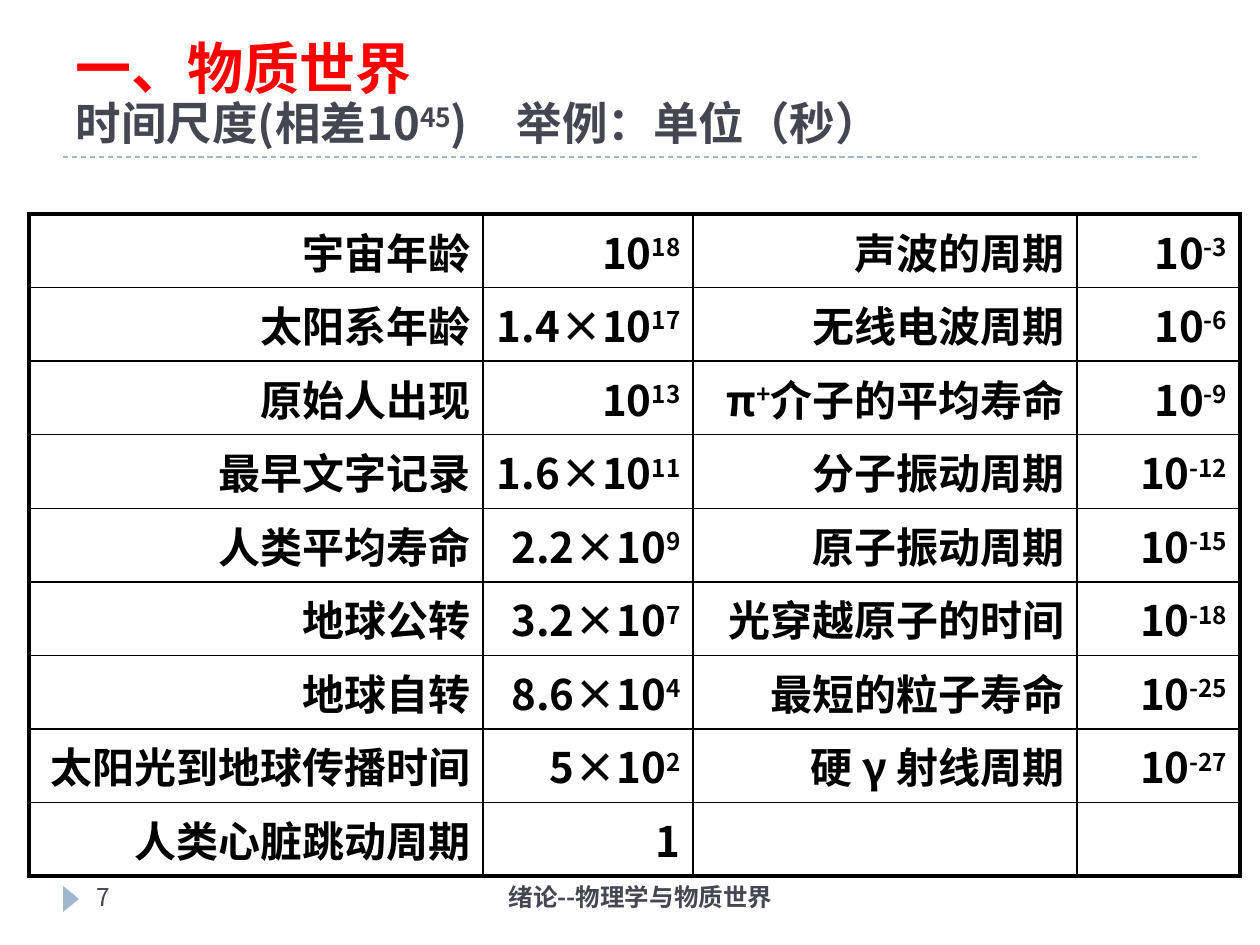
from dataclasses import dataclass

from lxml.etree import SubElement
from pptx import Presentation
from pptx.dml.color import RGBColor
from pptx.enum.dml import MSO_LINE_DASH_STYLE as Dash
from pptx.enum.shapes import MSO_CONNECTOR as Connector, MSO_SHAPE as Shape
from pptx.enum.text import MSO_ANCHOR as Anchor, MSO_AUTO_SIZE as AutoSize, PP_ALIGN as Align
from pptx.oxml import parse_xml
from pptx.oxml.ns import nsdecls, qn
from pptx.util import Emu, Pt

PX = 914400 / 126


@dataclass(frozen=True)
class Theme:
    font: str = "Noto Sans CJK JP"
    red: str = "FF0000"
    slate: str = "464653"
    black: str = "000000"
    accent: str = "9FB8CD"
    heading: int = 32
    subheading: int = 26
    cell: int = 24
    footer: int = 14
    hairline: float = 0.75
    grid: float = 1
    frame: float = 2.25


THEME = Theme()


def px(length):
    return Emu(round(length * PX))


def write(paragraph, text, size, color, bold=False, align=Align.LEFT):
    paragraph.alignment = align
    for index, part in enumerate(text.split("^")):
        if not part:
            continue
        run = paragraph.add_run()
        run.text = part
        run.font.size, run.font.bold, run.font.name = Pt(size), bold, THEME.font
        run.font.color.rgb = RGBColor.from_string(color)
        properties = run.font._element
        properties.set("lang", "zh-CN")
        if index % 2:
            properties.set("baseline", "30000")
        SubElement(properties, qn("a:ea")).set("typeface", THEME.font)


class SlideBuilder:
    def __init__(self, slide, theme):
        self.slide, self.theme = slide, theme

    def rule(self, left, right, y):
        rule = self.slide.shapes.add_connector(
            Connector.STRAIGHT, px(left), px(y), px(right), px(y))
        rule.line.color.rgb = RGBColor.from_string(self.theme.accent)
        rule.line.width = Pt(self.theme.hairline)
        rule.line.dash_style = Dash.DASH
        SubElement(rule._element.spPr, qn("a:effectLst"))

    def marker(self, left, top, width, height):
        marker = self.slide.shapes.add_shape(
            Shape.ISOSCELES_TRIANGLE, px(left), px(top), px(width), px(height))
        marker.rotation = 90
        marker.shadow.inherit = False
        marker.fill.solid()
        marker.fill.fore_color.rgb = RGBColor.from_string(self.theme.accent)
        marker.line.fill.background()

    def title(self, left, top, width, height, heading, subheading):
        title = self.slide.shapes.title
        title.left, title.top, title.width, title.height = map(px, (left, top, width, height))
        frame = title.text_frame
        frame.auto_size, frame.vertical_anchor = AutoSize.NONE, Anchor.BOTTOM
        paragraph = frame.paragraphs[0]
        paragraph.line_spacing = 0.9
        write(paragraph, heading, size=self.theme.heading, color=self.theme.red, bold=True)
        paragraph.add_line_break()
        write(paragraph, subheading, size=self.theme.subheading, color=self.theme.slate, bold=True)

    def footer(self, left, top, width, height, text, **style):
        frame = self.slide.shapes.add_textbox(*map(px, (left, top, width, height))).text_frame
        frame.word_wrap = True
        write(frame.paragraphs[0], text, size=self.theme.footer, color=self.theme.slate, **style)

    def border(self, cell, outer_sides):
        properties = cell._tc.get_or_add_tcPr()
        for position, side in enumerate("LRTB"):
            width = Pt(self.theme.frame if side in outer_sides else self.theme.grid)
            properties.insert(position, parse_xml(
                f'<a:ln{side} {nsdecls("a")} w="{width}"><a:solidFill>'
                f'<a:srgbClr val="{self.theme.black}"/></a:solidFill></a:ln{side}>'))

    def table(self, left, top, widths, row_height, rows):
        table = self.slide.shapes.add_table(
            len(rows), len(widths), px(left), px(top),
            px(sum(widths)), px(row_height * len(rows))).table
        table.first_row = table.horz_banding = False
        for column, width in zip(table.columns, widths):
            column.width = px(width)
        last_row, last_column = len(rows) - 1, len(widths) - 1
        for r, values in enumerate(rows):
            table.rows[r].height = px(row_height)
            for c, value in enumerate(values):
                cell = table.cell(r, c)
                cell.fill.background()
                edges = {"L": c == 0, "R": c == last_column, "T": r == 0, "B": r == last_row}
                self.border(cell, [side for side, outer in edges.items() if outer])
                write(cell.text_frame.paragraphs[0], value, size=self.theme.cell,
                      color=self.theme.black, bold=True, align=Align.RIGHT)


TIME_SCALES = [
    ("宇宙年龄", "10^18", "声波的周期", "10^-3"),
    ("太阳系年龄", "1.4×10^17", "无线电波周期", "10^-6"),
    ("原始人出现", "10^13", "π^+^介子的平均寿命", "10^-9"),
    ("最早文字记录", "1.6×10^11", "分子振动周期", "10^-12"),
    ("人类平均寿命", "2.2×10^9", "原子振动周期", "10^-15"),
    ("地球公转", "3.2×10^7", "光穿越原子的时间", "10^-18"),
    ("地球自转", "8.6×10^4", "最短的粒子寿命", "10^-25"),
    ("太阳光到地球传播时间", "5×10^2", "硬 γ 射线周期", "10^-27"),
    ("人类心脏跳动周期", "1", "", ""),
]


def main():
    deck = Presentation()
    deck.slide_width, deck.slide_height = px(1260), px(945)
    page = SlideBuilder(deck.slides.add_slide(deck.slide_layouts[5]), THEME)
    for y in (876, 157):
        page.rule(63, 1197, y)
    page.marker(58, 891, 26, 16)
    page.title(63, 21, 1134, 136, "一、物质世界", "时间尺度(相差10^45^)\t举例：单位（秒）")
    page.table(29, 214, (454, 210, 384, 163), 73, TIME_SCALES)
    page.footer(84, 876, 273, 50, "7")
    page.footer(399, 876, 483, 50, "绪论--物理学与物质世界", bold=True, align=Align.CENTER)
    deck.save("out.pptx")


if __name__ == "__main__":
    main()
